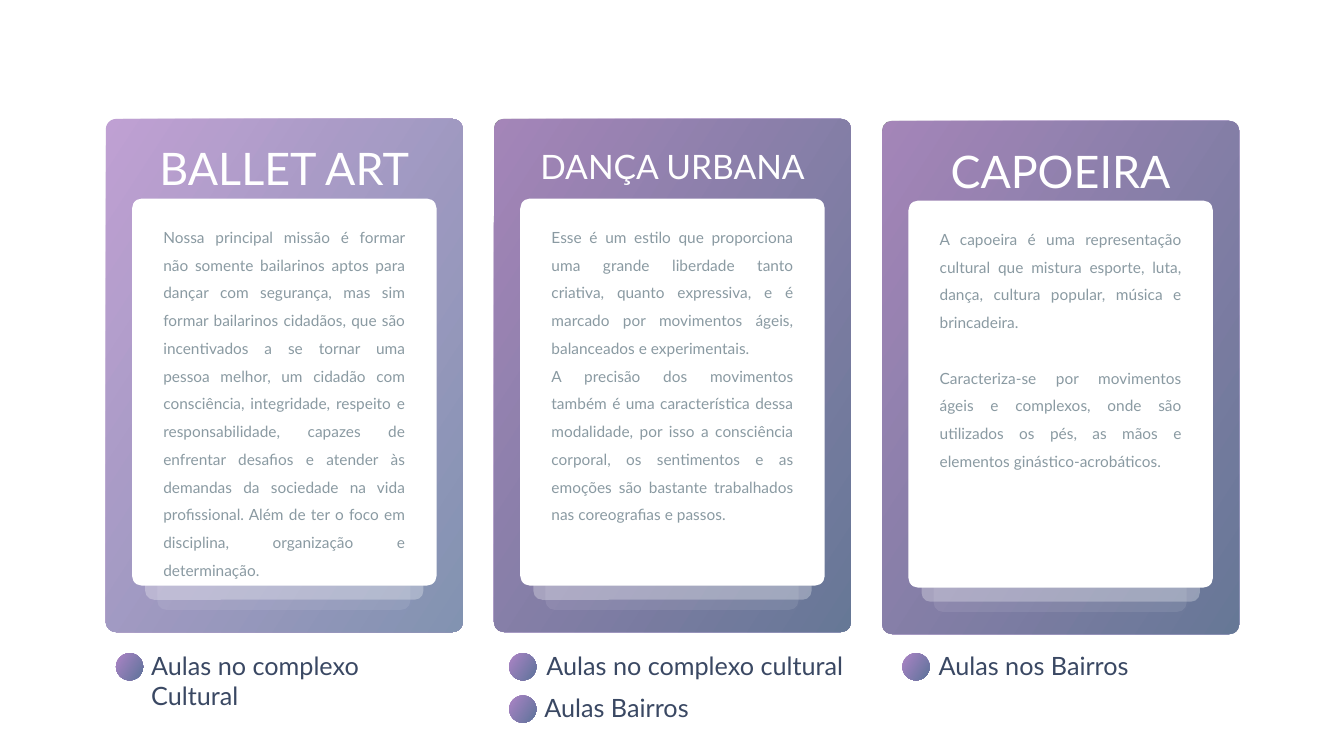
from dataclasses import dataclass

from lxml.etree import SubElement
from pptx import Presentation
from pptx.dml.color import RGBColor
from pptx.enum.shapes import MSO_SHAPE
from pptx.enum.text import MSO_AUTO_SIZE, PP_ALIGN
from pptx.oxml.ns import qn
from pptx.shapes.autoshape import Shape
from pptx.slide import Slide
from pptx.util import Emu, Pt

PX = 9144  # EMU per px, 100 px to the inch


@dataclass(frozen=True)
class Theme:
    font: str = "Lato"
    white: str = "FFFFFF"
    backing: str = "88898C"
    purple: str = "AD84C6"
    blue: str = "5D739A"
    body: str = "8A9AA2"
    venue: str = "3A4863"
    body_size: int = 11
    venue_size: int = 18
    gradient_angle: int = 33


@dataclass(frozen=True)
class Box:
    x: int
    y: int
    w: int
    h: int

    def shifted(self, dx: int, dy: int) -> "Box":
        return Box(self.x + dx, self.y + dy, self.w, self.h)

    def emu(self) -> list[Emu]:
        return [Emu(v * PX) for v in (self.x, self.y, self.w, self.h)]


@dataclass(frozen=True)
class Card:
    title: str
    title_size: int
    title_y: int
    title_h: int
    paragraphs: tuple[str, ...]
    body_h: int
    dy: int = 0
    gap: float = 0  # points between paragraphs
    backed: bool = True


@dataclass(frozen=True)
class Venue:
    text: str
    dot_x: int
    text_x: int
    row: int = 0
    w: int = 310
    h: int = 42


THEME = Theme()
CARD_STEP = 385
VENUE_STEP = 42
FRAME = Box(105, 118, 354, 509)
FAR_SHEET = Box(156, 324, 251, 281)
PANEL = Box(131, 197, 302, 384)
NEAR_SHEET = Box(144, 314, 276, 281)

CARDS = (
    Card("BALLET ART", 32, 137, 59, (
        "Nossa principal missão é formar não somente bailarinos aptos para dançar com "
        "segurança, mas sim formar bailarinos cidadãos, que são incentivados a se tornar "
        "uma pessoa melhor, um cidadão com consciência, integridade, respeito e "
        "responsabilidade, capazes de enfrentar desafios e atender às demandas da "
        "sociedade na vida profissional. Além de ter o foco em disciplina, organização "
        "e determinação.",), 367, backed=False),
    Card("DANÇA URBANA", 24, 142, 46, (
        "Esse é um estilo que proporciona uma grande liberdade tanto criativa, quanto "
        "expressiva, e é marcado por movimentos ágeis, balanceados e experimentais.",
        "A precisão dos movimentos também é uma característica dessa modalidade, por "
        "isso a consciência corporal, os sentimentos e as emoções são bastante "
        "trabalhados nas coreografias e passos."), 307),
    Card("CAPOEIRA", 32, 138, 59, (
        "A capoeira é uma representação cultural que mistura esporte, luta, dança, "
        "cultura popular, música e brincadeira.",
        "Caracteriza-se por movimentos ágeis e complexos, onde são utilizados os pés, "
        "as mãos e elementos ginástico-acrobáticos."), 252, dy=2, gap=19.8),
)

VENUES = (
    Venue("Aulas no complexo Cultural", 115, 144),
    Venue("Aulas no complexo cultural", 505, 536, w=308, h=72),
    Venue("Aulas nos Bairros", 895, 925),
    Venue("Aulas Bairros", 505, 534, row=1),
)


def set_opacity(s: Shape, percent: int) -> None:
    for color in s._element.spPr.iter(qn("a:srgbClr")):
        SubElement(color, qn("a:alpha"), val=str(percent * 1000))


def add_plain(slide: Slide, kind: MSO_SHAPE, box: Box) -> Shape:
    s = slide.shapes.add_shape(kind, *box.emu())
    s.shadow.inherit = False
    s.line.fill.background()
    return s


def add_rounded(slide: Slide, box: Box, corner: float) -> Shape:
    s = add_plain(slide, MSO_SHAPE.ROUNDED_RECTANGLE, box)
    s.adjustments[0] = corner
    return s


def fill_solid(s: Shape, color: str, opacity: int = 100) -> None:
    s.fill.solid()
    s.fill.fore_color.rgb = RGBColor.from_string(color)
    if opacity < 100:
        set_opacity(s, opacity)


def fill_gradient(s: Shape, opacity: int = 100) -> None:
    s.fill.gradient()
    s.fill.gradient_angle = 360 - THEME.gradient_angle
    for stop, color in zip(s.fill.gradient_stops, (THEME.purple, THEME.blue)):
        stop.color.rgb = RGBColor.from_string(color)
    if opacity < 100:
        set_opacity(s, opacity)


def add_text(slide: Slide, box: Box, paragraphs: tuple[str, ...], size: int, color: str,
             inset: int, align: PP_ALIGN = PP_ALIGN.LEFT, spacing: float = 1,
             gap: float = 0) -> None:
    tf = slide.shapes.add_textbox(*box.emu()).text_frame
    tf.word_wrap = True
    tf.auto_size = MSO_AUTO_SIZE.SHAPE_TO_FIT_TEXT
    tf.margin_left = tf.margin_right = tf.margin_top = tf.margin_bottom = Emu(inset * PX)
    tf.text = "\n".join(paragraphs)
    for i, p in enumerate(tf.paragraphs):
        p.alignment = align
        p.line_spacing = spacing
        if i and gap:
            p.space_before = Pt(gap)
        for r in p.runs:
            r.font.name = THEME.font
            r.font.size = Pt(size)
            r.font.color.rgb = RGBColor.from_string(color)


def add_card(slide: Slide, card: Card, dx: int) -> None:
    frame = FRAME.shifted(dx, card.dy)
    if card.backed:
        fill_solid(add_rounded(slide, frame, 0.025), THEME.backing)
    fill_gradient(add_rounded(slide, frame, 0.029), 76)
    for sheet, corner, opacity in ((FAR_SHEET, 0.036, 9), (PANEL, 0.032, 100),
                                   (NEAR_SHEET, 0.032, 29)):
        s = add_rounded(slide, sheet.shifted(dx, card.dy), corner)
        fill_solid(s, THEME.white, opacity)
    title_box = Box(142, card.title_y, 280, card.title_h).shifted(dx, card.dy)
    add_text(slide, title_box, (card.title,), card.title_size, THEME.white, 3, PP_ALIGN.CENTER)
    body_box = Box(159, 214, 246, card.body_h).shifted(dx, card.dy)
    add_text(slide, body_box, card.paragraphs, THEME.body_size, THEME.body, 3,
             PP_ALIGN.JUSTIFY, 1.5, card.gap)


def add_venue(slide: Slide, venue: Venue) -> None:
    dy = venue.row * VENUE_STEP
    add_text(slide, Box(venue.text_x, 639 + dy, venue.w, venue.h), (venue.text,),
             THEME.venue_size, THEME.venue, 6)
    fill_gradient(add_plain(slide, MSO_SHAPE.OVAL, Box(venue.dot_x, 648 + dy, 27, 27)))


def main() -> None:
    prs = Presentation()
    prs.slide_width, prs.slide_height = Emu(1333 * PX), Emu(750 * PX)
    slide = prs.slides.add_slide(prs.slide_layouts[6])
    for i, card in enumerate(CARDS):
        add_card(slide, card, i * CARD_STEP)
    for venue in VENUES:
        add_venue(slide, venue)
    prs.save("out.pptx")


if __name__ == "__main__":
    main()
